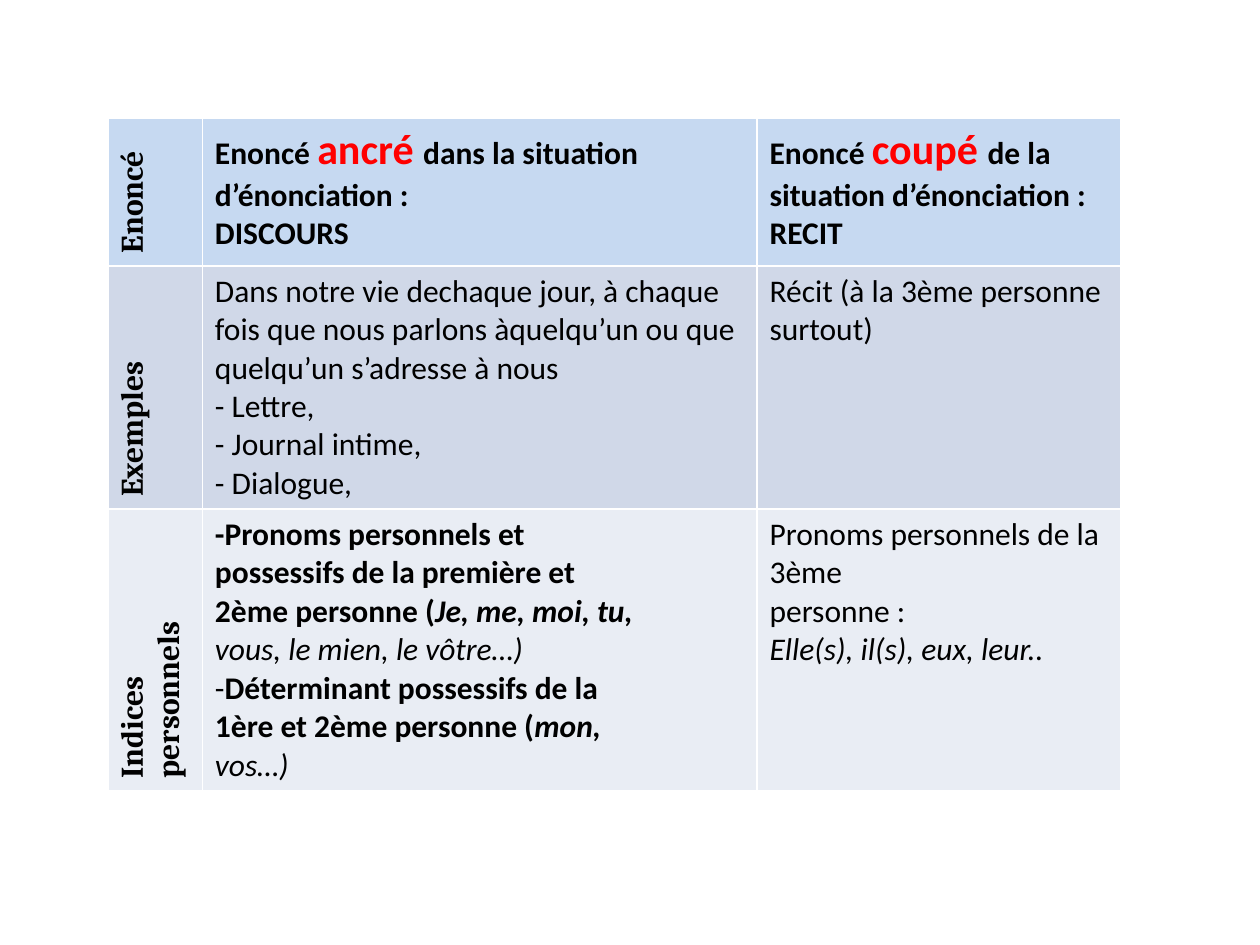
from pptx import Presentation
from pptx.dml.color import RGBColor
from pptx.util import Cm, Pt

BLACK, RED = "000000", "FF0000"
HEADER_FILL, EXAMPLES_FILL, CLUES_FILL = "C6D9F1", "D0D8E8", "E9EDF4"
COLUMN_WIDTHS = (1.9, 11.18, 7.34)
ROW_HEIGHTS = (2.97, 4.9, 5.67)
BOLD, ITALIC, KEYWORD = "bold", "italic", "keyword"

HEADINGS = (
    [
        [("Enoncé ", BOLD), ("ancré ", BOLD + KEYWORD), ("dans la situation", BOLD)],
        [("d’énonciation :", BOLD)],
        [("DISCOURS", BOLD)],
    ],
    [
        [("Enoncé ", BOLD), ("coupé ", BOLD + KEYWORD),
         ("de la situation d’énonciation :", BOLD)],
        [("RECIT", BOLD)],
    ],
)
EXAMPLES = (
    [
        [("Dans notre vie dechaque jour, à chaque", "")],
        [("fois que nous parlons àquelqu’un ou que", "")],
        [("quelqu’un s’adresse à nous", "")],
        [("- Lettre,", "")],
        [("- Journal intime,", "")],
        [("- Dialogue,", "")],
    ],
    [
        [("Récit (à la 3ème personne", "")],
        [("surtout)", "")],
    ],
)
CLUES = (
    [
        [("-Pronoms personnels et", BOLD)],
        [("possessifs de la première et", BOLD)],
        [("2ème personne (", BOLD), ("Je, me, moi, tu,", BOLD + ITALIC)],
        [("vous, le mien, le vôtre…)", ITALIC)],
        [("-", ""), ("Déterminant possessifs de la", BOLD)],
        [("1ère et 2ème personne (", BOLD), ("mon,", BOLD + ITALIC)],
        [("vos…)", ITALIC)],
    ],
    [
        [("Pronoms personnels de la 3ème", "")],
        [("personne :", "")],
        [("Elle(s), il(s), eux, leur..", ITALIC)],
    ],
)
ROWS = (
    ("Enoncé", HEADINGS, HEADER_FILL),
    ("Exemples", EXAMPLES, EXAMPLES_FILL),
    ("Indices personnels", CLUES, CLUES_FILL),
)


def color(value):
    return RGBColor.from_string(value)


def fill_cell(cell, lines, background, font_name="Calibri"):
    cell.fill.solid()
    cell.fill.fore_color.rgb = color(background)
    frame = cell.text_frame
    for index, line in enumerate(lines):
        paragraph = frame.add_paragraph() if index else frame.paragraphs[0]
        paragraph.font.name = font_name
        paragraph.font.size = Pt(18)
        paragraph.font.color.rgb = color(BLACK)
        for words, style in line:
            run = paragraph.add_run()
            run.text = words
            run.font.bold = BOLD in style
            run.font.italic = ITALIC in style
            if KEYWORD in style:
                run.font.size = Pt(24)
                run.font.color.rgb = color(RED)


def add_comparison(slide, left, top):
    table = slide.shapes.add_table(
        len(ROWS), len(COLUMN_WIDTHS), Cm(left), Cm(top),
        Cm(sum(COLUMN_WIDTHS)), Cm(sum(ROW_HEIGHTS))).table
    for column, width in zip(table.columns, COLUMN_WIDTHS):
        column.width = Cm(width)
    for row, height, (label, contents, background) in zip(table.rows, ROW_HEIGHTS, ROWS):
        row.height = Cm(height)
        label_cell, *content_cells = row.cells
        fill_cell(label_cell, [[(label, BOLD)]], background, "Cambria")
        label_cell._tc.get_or_add_tcPr().set("vert", "vert270")
        for cell, lines in zip(content_cells, contents):
            fill_cell(cell, lines, background)


def main():
    presentation = Presentation()
    presentation.slide_width, presentation.slide_height = Cm(25.4), Cm(19.05)
    slide = presentation.slides.add_slide(presentation.slide_layouts[6])
    add_comparison(slide, 2.18, 2.39)
    presentation.save("out.pptx")


if __name__ == "__main__":
    main()
